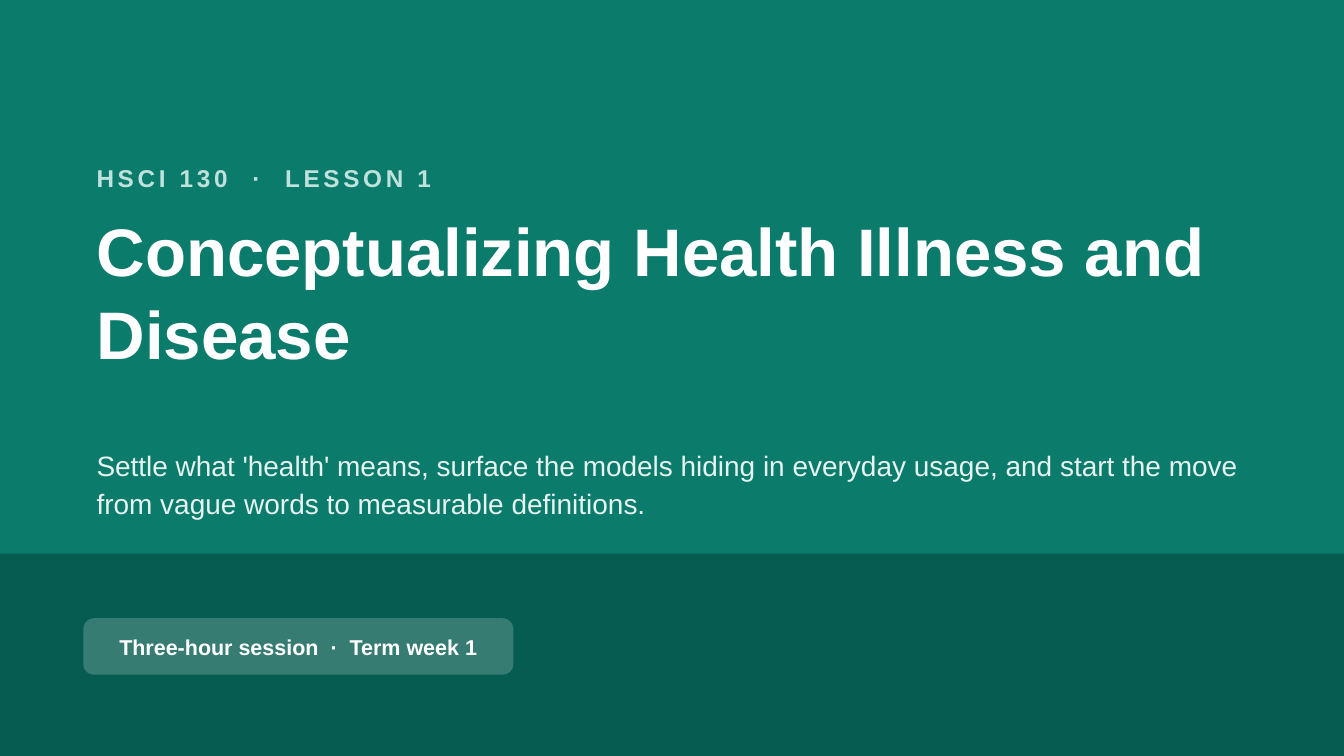
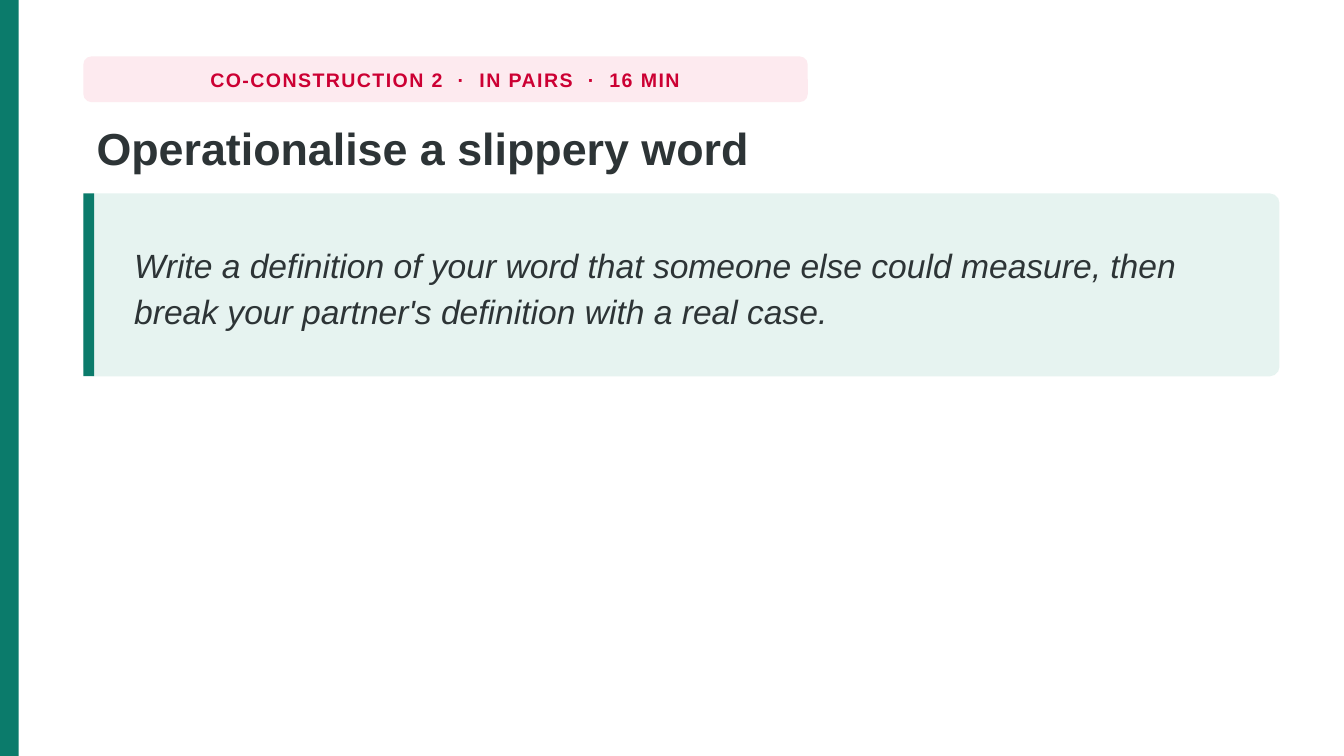
from collections import namedtuple

from lxml import etree
from pptx import Presentation
from pptx.dml.color import RGBColor
from pptx.enum.shapes import MSO_SHAPE
from pptx.enum.text import MSO_ANCHOR, PP_ALIGN
from pptx.oxml.ns import qn
from pptx.util import Emu, Pt

EMU_PER_PX = 4572
SLIDE_WIDTH, SLIDE_HEIGHT = 2000, 1125
MARGIN = 124
CONTENT_WIDTH = 1780

FONT = "Arial"
TEAL = RGBColor(0x0B, 0x7B, 0x6B)
DARK_TEAL = RGBColor(0x06, 0x5C, 0x50)
SOFT_TEAL = RGBColor(0xBF, 0xE3, 0xDC)
PALE_TEAL = RGBColor(0xE6, 0xF3, 0xF0)
PALE_PINK = RGBColor(0xFD, 0xEA, 0xEF)
CRIMSON = RGBColor(0xCC, 0x00, 0x33)
INK = RGBColor(0x2D, 0x34, 0x36)
WHITE = RGBColor(0xFF, 0xFF, 0xFF)

RECTANGLE = MSO_SHAPE.RECTANGLE
ROUNDED = MSO_SHAPE.ROUNDED_RECTANGLE
TOP = MSO_ANCHOR.TOP
MIDDLE = MSO_ANCHOR.MIDDLE
LEFT = PP_ALIGN.LEFT
CENTER = PP_ALIGN.CENTER

Box = namedtuple("Box", "left top width height")


def to_emu(box):
    return [Emu(length * EMU_PER_PX) for length in box]


def add_panel(slide, box, color, radius=0, opacity=100):
    shape = slide.shapes.add_shape(ROUNDED if radius else RECTANGLE, *to_emu(box))
    shape.shadow.inherit = False
    shape.line.fill.background()
    shape.fill.solid()
    shape.fill.fore_color.rgb = color
    if radius:
        shape.adjustments[0] = radius / box.height
    if opacity < 100:
        color_element = shape.fill._xPr.find(qn("a:solidFill"))[0]
        etree.SubElement(color_element, qn("a:alpha"), val=str(opacity * 1000))
    return shape


def write_text(shape, text, size, color, bold=False, italic=False, tracking=0,
               line_spacing=None, anchor=TOP, align=LEFT):
    frame = shape.text_frame
    frame.word_wrap = True
    frame.vertical_anchor = anchor
    paragraph = frame.paragraphs[0]
    paragraph.alignment = align
    if line_spacing:
        paragraph.line_spacing = line_spacing
    run = paragraph.add_run()
    run.text = text
    run.font.name = FONT
    run.font.size = Pt(size)
    run.font.bold = bold
    run.font.italic = italic
    run.font.color.rgb = color
    if tracking:
        run.font._element.set("spc", str(int(tracking * 100)))


def add_text(slide, box, text, size, color, **style):
    write_text(slide.shapes.add_textbox(*to_emu(box)), text, size, color, **style)


def add_title(slide, box, text, size, color):
    add_text(slide, box, text, size, color, bold=True, line_spacing=1.02)


def add_pill(slide, box, text, size, color, fill, radius, opacity=100, tracking=0):
    pill = add_panel(slide, box, fill, radius, opacity)
    write_text(pill, text, size, color, bold=True, tracking=tracking,
               anchor=MIDDLE, align=CENTER)


def add_quote(slide, box, text):
    add_panel(slide, box, PALE_TEAL, radius=14)
    add_panel(slide, box._replace(width=16), TEAL)
    indent, inset = 56, 10
    text_box = Box(box.left + indent, box.top + inset,
                   box.width - 110, box.height - 2 * inset)
    add_text(slide, text_box, text, 18, INK, italic=True,
             line_spacing=1.16, anchor=MIDDLE)


def add_footer_band(slide, box, label):
    add_panel(slide, box, DARK_TEAL)
    pill_box = Box(box.left + MARGIN, box.top + 96, 640, 84)
    add_pill(slide, pill_box, label, 11.5, WHITE, WHITE, radius=16, opacity=20)


def add_slide(presentation, background):
    slide = presentation.slides.add_slide(presentation.slide_layouts[6])
    slide.background.fill.solid()
    slide.background.fill.fore_color.rgb = background
    return slide


def build_cover(presentation, course, title, summary, session):
    slide = add_slide(presentation, TEAL)
    add_footer_band(slide, Box(0, 824, SLIDE_WIDTH, SLIDE_HEIGHT - 824), session)
    add_text(slide, Box(MARGIN, 224, CONTENT_WIDTH, 80), course, 13, SOFT_TEAL,
             bold=True, tracking=2, anchor=MIDDLE)
    add_title(slide, Box(MARGIN, 300, CONTENT_WIDTH, 310), title, 36, WHITE)
    add_text(slide, Box(MARGIN, 650, CONTENT_WIDTH, 160), summary, 15, PALE_TEAL,
             line_spacing=1.15)


def build_activity(presentation, label, title, prompt):
    slide = add_slide(presentation, WHITE)
    add_panel(slide, Box(0, 0, 28, SLIDE_HEIGHT), TEAL)
    add_pill(slide, Box(MARGIN, 84, 1078, 68), label, 10.5, CRIMSON, PALE_PINK,
             radius=12, tracking=0.8)
    add_title(slide, Box(MARGIN, 168, CONTENT_WIDTH, 112), title, 24, INK)
    add_quote(slide, Box(MARGIN, 288, CONTENT_WIDTH, 272), prompt)


def main():
    presentation = Presentation()
    presentation.slide_width = Emu(SLIDE_WIDTH * EMU_PER_PX)
    presentation.slide_height = Emu(SLIDE_HEIGHT * EMU_PER_PX)
    build_cover(
        presentation,
        course="HSCI 130  ·  LESSON 1",
        title="Conceptualizing Health Illness and Disease",
        summary="Settle what 'health' means, surface the models hiding in everyday "
                "usage, and start the move from vague words to measurable definitions.",
        session="Three-hour session  ·  Term week 1",
    )
    build_activity(
        presentation,
        label="CO-CONSTRUCTION 2  ·  IN PAIRS  ·  16 MIN",
        title="Operationalise a slippery word",
        prompt="Write a definition of your word that someone else could measure, "
               "then break your partner's definition with a real case.",
    )
    presentation.save("out.pptx")


if __name__ == "__main__":
    main()
